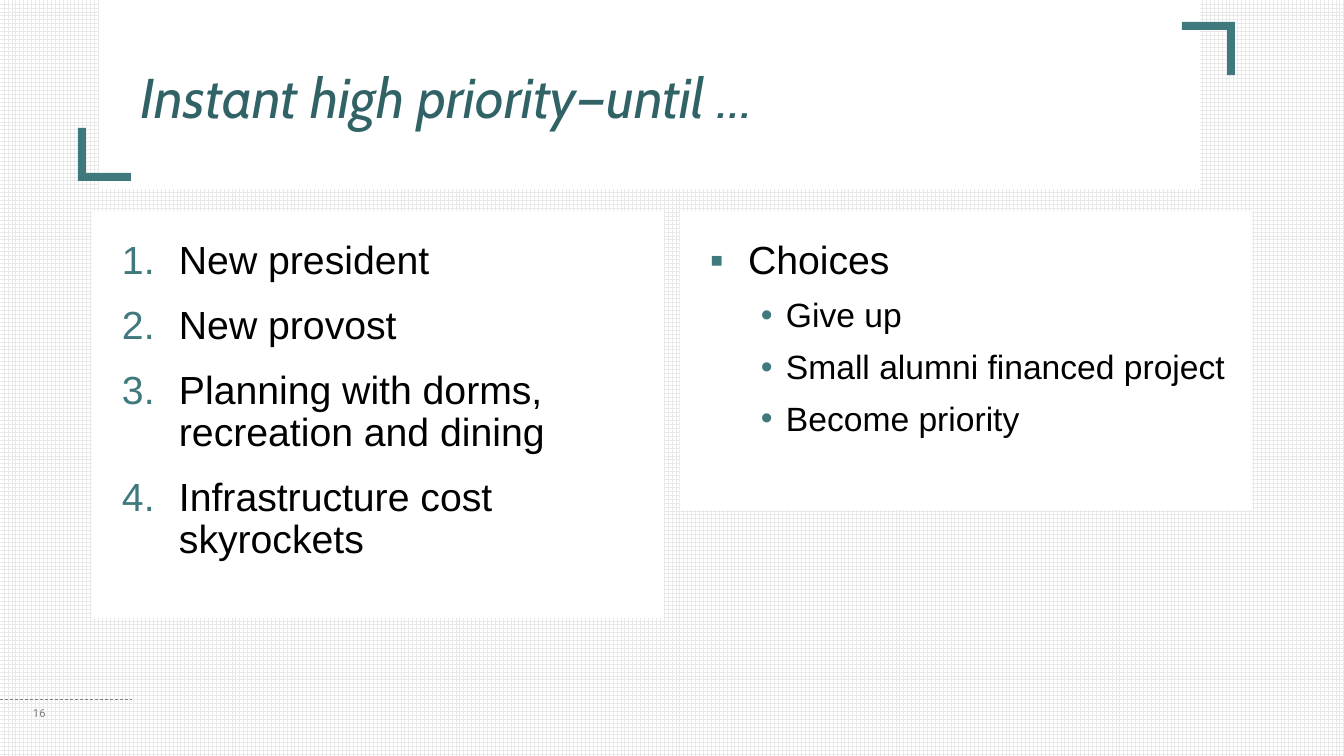
from lxml import etree
from pptx import Presentation
from pptx import util as u
from pptx.dml.color import RGBColor
from pptx.enum import dml, shapes, text
from pptx.oxml.ns import qn

COLORS = {"teal": "3F787D", "title": "306266", "black": "000000", "white": "FFFFFF",
          "grid": "E9E9E9", "gray": "808080"}
TITLE = "Instant high priority—until …"
PAGE_NUMBER = "16"
REASONS = [
    ("number", "New president"),
    ("number", "New provost"),
    ("number", "Planning with dorms, recreation and dining"),
    ("number", "Infrastructure cost skyrockets"),
]
CHOICES = [
    ("square", "Choices"),
    ("dot", "Give up"),
    ("dot", "Small alumni financed project"),
    ("dot", "Become priority"),
]
LEVELS = {
    "number": {"level": 0, "margin": 57, "hang": 57, "size": 28, "before": 10, "bullet": None},
    "square": {"level": 0, "margin": 38, "hang": 38, "size": 28, "before": 10, "bullet": "▪"},
    "dot": {"level": 1, "margin": 76, "hang": 25, "size": 24, "before": 5, "bullet": "•"},
}
PANEL_LEFT, PANEL_TOP, PANEL_WIDTH, PANEL_STEP = 92, 211, 572, 588
PANELS = [(407, REASONS), (299, CHOICES)]
CORNERS = [(1182, 22, 180), (78, 128, 0)]
CORNER_SIZE = 53
EMU_PER_PX = 914400 / 100.8


def px(*values):
    return [u.Emu(round(value * EMU_PER_PX)) for value in values]


def color(name):
    return RGBColor.from_string(COLORS[name])


def add_block(slide, kind, box, fill):
    shape = slide.shapes.add_shape(kind, *px(*box))
    shape.shadow.inherit = False
    shape.fill.solid()
    shape.fill.fore_color.rgb = color(fill)
    shape.line.fill.background()
    return shape


def prepare_frame(shape, insets, anchor):
    frame = shape.text_frame
    frame.word_wrap = True
    frame.vertical_anchor = anchor
    frame.margin_left, frame.margin_top, frame.margin_right, frame.margin_bottom = px(*insets)
    return frame


def set_font(paragraph, name, size, tint, italic=None):
    font = paragraph.font
    font.name, font.size, font.italic = name, u.Pt(size), italic
    font.color.rgb = color(tint)


def add_label(slide, box, insets, words, *style):
    shape = slide.shapes.add_textbox(*px(*box))
    paragraph = prepare_frame(shape, insets, text.MSO_ANCHOR.MIDDLE).paragraphs[0]
    paragraph.text = words
    paragraph.line_spacing = 0.9
    set_font(paragraph, *style)


def add_bullet(paragraph, level):
    properties = paragraph._p.get_or_add_pPr()
    margin, hang = px(level["margin"], level["hang"])
    properties.set("marL", str(margin))
    properties.set("indent", str(-hang))
    tint = etree.SubElement(properties, qn("a:buClr"))
    etree.SubElement(tint, qn("a:srgbClr"), val=COLORS["teal"])
    etree.SubElement(properties, qn("a:buFont"), typeface="Arial")
    if level["bullet"]:
        etree.SubElement(properties, qn("a:buChar"), char=level["bullet"])
    else:
        etree.SubElement(properties, qn("a:buAutoNum"), type="arabicPeriod")


def add_panel(slide, box, items):
    shape = add_block(slide, shapes.MSO_SHAPE.RECTANGLE, box, "white")
    frame = prepare_frame(shape, (30, 30, 10, 5), text.MSO_ANCHOR.TOP)
    for index, (kind, words) in enumerate(items):
        level = LEVELS[kind]
        paragraph = frame.add_paragraph() if index else frame.paragraphs[0]
        paragraph.text = words
        paragraph.level = level["level"]
        paragraph.alignment = text.PP_ALIGN.LEFT
        paragraph.line_spacing = 0.9
        paragraph.space_before = u.Pt(level["before"] if index else 0)
        paragraph.space_after = u.Pt(6)
        add_bullet(paragraph, level)
        set_font(paragraph, "Arial", level["size"], "black")


def add_footer_rule(slide):
    rule = slide.shapes.add_connector(shapes.MSO_CONNECTOR.STRAIGHT, *px(0, 699, 132, 699))
    rule.line.color.rgb = color("gray")
    rule.line.width = u.Pt(0.5)
    rule.line.dash_style = dml.MSO_LINE.DASH
    etree.SubElement(rule._element.spPr, qn("a:effectLst"))


def main():
    presentation = Presentation()
    presentation.slide_width, presentation.slide_height = px(1344, 756)
    slide = presentation.slides.add_slide(presentation.slide_layouts[6])
    background = slide.background.fill
    background.patterned()
    background.pattern = dml.MSO_PATTERN.LARGE_GRID
    background.fore_color.rgb = color("grid")
    background.back_color.rgb = color("white")

    add_footer_rule(slide)
    add_block(slide, shapes.MSO_SHAPE.RECTANGLE, (99, 0, 1101, 189), "white")
    for left, top, rotation in CORNERS:
        box = (left, top, CORNER_SIZE, CORNER_SIZE)
        corner = add_block(slide, shapes.MSO_SHAPE.CORNER, box, "teal")
        corner.rotation = rotation
        corner.adjustments[0], corner.adjustments[1] = 0.15, 0.15

    add_label(slide, (0, 36, 1275, 128), (141, 30, 10, 30), TITLE, "Cabin", 40, "title", True)
    for index, (height, items) in enumerate(PANELS):
        left = PANEL_LEFT + index * PANEL_STEP
        add_panel(slide, (left, PANEL_TOP, PANEL_WIDTH, height), items)
    add_label(slide, (23, 694, 110, 40), (10, 5, 10, 5), PAGE_NUMBER, "Roboto", 8, "gray")
    presentation.save("out.pptx")


if __name__ == "__main__":
    main()
